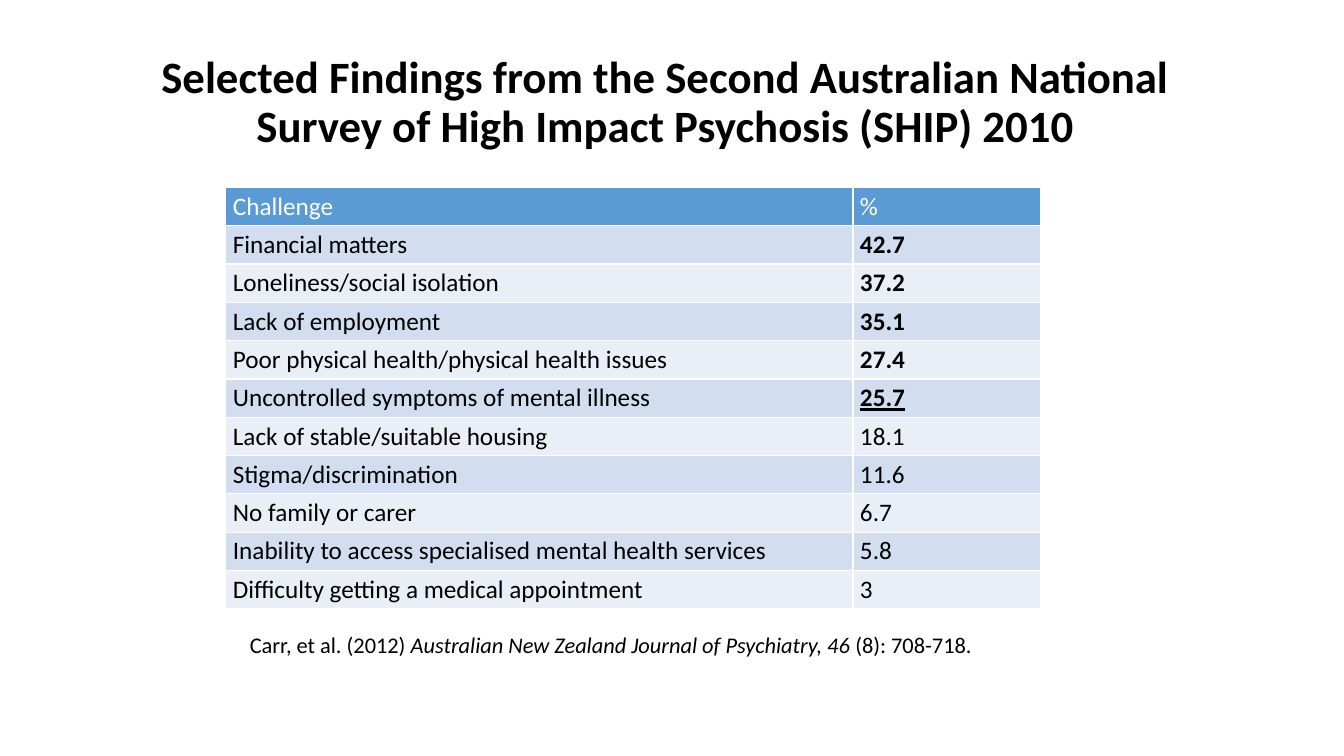
from lxml import etree
from pptx import Presentation
from pptx.dml.color import RGBColor
from pptx.enum.text import MSO_ANCHOR, PP_ALIGN
from pptx.oxml.ns import qn
from pptx.util import Emu, Pt

PX = 9144  # 100 px to the inch
MIDDLE, TOP = MSO_ANCHOR.MIDDLE, MSO_ANCHOR.TOP
LEFT, CENTER = PP_ALIGN.LEFT, PP_ALIGN.CENTER

BLACK, WHITE = "000000", "FFFFFF"
HEADER_FILL = "5B9BD5"
BAND_FILLS = ["D2DEEF", "EAEFF7"]

TITLE = ("Selected Findings from the Second Australian National "
         "Survey of High Impact Psychosis (SHIP) 2010")
HEADINGS = ("Challenge", "%")
FINDINGS = [
    ("Financial matters", "42.7"),
    ("Loneliness/social isolation", "37.2"),
    ("Lack of employment", "35.1"),
    ("Poor physical health/physical health issues", "27.4"),
    ("Uncontrolled symptoms of mental illness", "25.7"),
    ("Lack of stable/suitable housing", "18.1"),
    ("Stigma/discrimination", "11.6"),
    ("No family or carer", "6.7"),
    ("Inability to access specialised mental health services", "5.8"),
    ("Difficulty getting a medical appointment", "3"),
]
BOLD_FINDINGS = 5
COLUMN_WIDTHS = [622, 186]
ROW_HEIGHT = 38


def px(length):
    return Emu(length * PX)


def rgb(value):
    return RGBColor.from_string(value)


def write(paragraph, text, size=18, color=BLACK, bold=False, italic=False,
          underline=False, align=LEFT, spacing=1.0):
    """Append text to the paragraph as one formatted run."""
    paragraph.alignment = align
    paragraph.line_spacing = spacing
    run = paragraph.add_run()
    run.text = text
    font = run.font
    font.name, font.size = "Calibri", Pt(size)
    font.bold, font.italic, font.underline = bold, italic, underline
    font.color.rgb = rgb(color)


def add_text_frame(slide, box, anchor, top=5, bottom=5):
    frame = slide.shapes.add_textbox(*map(px, box)).text_frame
    frame.word_wrap = True
    frame.vertical_anchor = anchor
    frame.margin_top, frame.margin_bottom = px(top), px(bottom)
    return frame


def add_title(slide, box):
    frame = add_text_frame(slide, box, MIDDLE, bottom=31)
    write(frame.paragraphs[0], TITLE, size=32, bold=True, align=CENTER,
          spacing=0.9)


def add_citation(slide, box):
    citation = add_text_frame(slide, box, TOP, top=23).paragraphs[0]
    write(citation, "Carr, et al. (2012) ", size=16)
    write(citation, "Australian New Zealand Journal of Psychiatry, 46 ",
          size=16, italic=True)
    write(citation, "(8): 708-718.", size=16)


def style_cell(cell, fill):
    properties = cell._tc.get_or_add_tcPr()
    for side in ("a:lnL", "a:lnR", "a:lnT", "a:lnB"):
        line = etree.SubElement(properties, qn(side), w=str(Pt(1)))
        solid = etree.SubElement(line, qn("a:solidFill"))
        etree.SubElement(solid, qn("a:srgbClr"), val=WHITE)
    cell.fill.solid()
    cell.fill.fore_color.rgb = rgb(fill)
    cell.margin_left = cell.margin_right = px(7)
    cell.margin_top = cell.margin_bottom = px(3)
    cell.vertical_anchor = MIDDLE


def add_findings_table(slide, left, top):
    rows = [HEADINGS, *FINDINGS]
    table = slide.shapes.add_table(
        len(rows), len(HEADINGS), px(left), px(top),
        px(sum(COLUMN_WIDTHS)), px(ROW_HEIGHT * len(rows))).table
    for column, width in zip(table.columns, COLUMN_WIDTHS):
        column.width = px(width)
    for r, values in enumerate(rows):
        table.rows[r].height = px(ROW_HEIGHT)
        is_header = r == 0
        fill = HEADER_FILL if is_header else BAND_FILLS[(r - 1) % 2]
        for c, value in enumerate(values):
            cell = table.cell(r, c)
            style_cell(cell, fill)
            write(cell.text_frame.paragraphs[0], value,
                  color=WHITE if is_header else BLACK,
                  bold=c == 1 and 1 <= r <= BOLD_FINDINGS,
                  underline=c == 1 and r == BOLD_FINDINGS)


def main():
    deck = Presentation()
    deck.slide_width, deck.slide_height = px(1333), px(750)
    slide = deck.slides.add_slide(deck.slide_layouts[6])
    add_title(slide, (149, 45, 1022, 141))
    add_findings_table(slide, 224, 186)
    add_citation(slide, (238, 603, 760, 55))
    deck.save("out.pptx")


if __name__ == "__main__":
    main()
